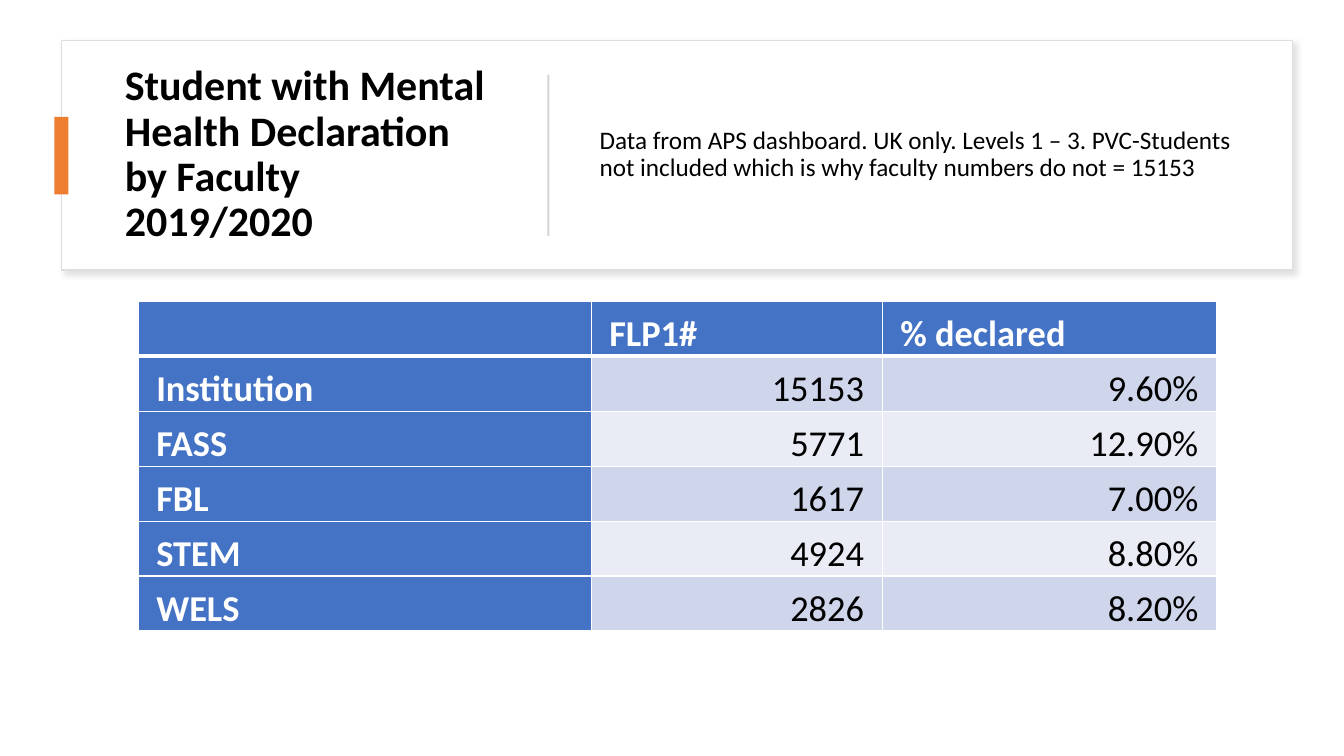
from dataclasses import dataclass

from lxml import etree
from pptx import Presentation
from pptx.dml.color import RGBColor
from pptx.enum.shapes import MSO_SHAPE
from pptx.enum.text import MSO_ANCHOR, PP_ALIGN
from pptx.oxml.ns import qn
from pptx.util import Inches, Pt

RECT = MSO_SHAPE.RECTANGLE
MIDDLE, BOTTOM = MSO_ANCHOR.MIDDLE, MSO_ANCHOR.BOTTOM
LEFT, RIGHT = PP_ALIGN.LEFT, PP_ALIGN.RIGHT

WHITE = RGBColor(0xFF, 0xFF, 0xFF)
BLACK = RGBColor(0x00, 0x00, 0x00)
BLUE = RGBColor(0x44, 0x72, 0xC4)
ORANGE = RGBColor(0xED, 0x7D, 0x31)
CARD_LINE = RGBColor(0xDE, 0xDE, 0xDE)
RULE_GRAY = RGBColor(0xD5, 0xD5, 0xD5)
SHADOW_GRAY = RGBColor(0xC5, 0xC3, 0xC3)
BANDS = (RGBColor(0xCF, 0xD5, 0xEA), RGBColor(0xE9, 0xEB, 0xF5))

FONT = "Calibri"
SLIDE_W, SLIDE_H = Inches(13.333), Inches(7.5)


@dataclass(frozen=True)
class Box:
    """A frame in percent of the slide's width and height."""
    x: float
    y: float
    w: float
    h: float

    def emu(self) -> tuple[int, int, int, int]:
        return (across(self.x), down(self.y), across(self.w), down(self.h))


@dataclass(frozen=True)
class Panel:
    box: Box
    fill: RGBColor
    line: RGBColor | None = None
    shadow: bool = False


@dataclass(frozen=True)
class Label:
    box: Box
    text: str
    size: int
    bold: bool = False
    space_after: int = 0


PANELS = (
    Panel(Box(4.58, 5.33, 91.58, 30.4), WHITE, CARD_LINE, True),
    Panel(Box(4.05, 15.47, 1.05, 10.27), ORANGE),
    Panel(Box(40.73, 9.87, 0.15, 21.33), RULE_GRAY),
)
LABELS = (
    Label(Box(8.55, 8.53, 29.18, 24),
          "Student with Mental Health Declaration\vby Faculty 2019/2020", 30, True),
    Label(Box(43.88, 8.53, 49.2, 24),
          "Data from APS dashboard. UK only. Levels 1 – 3. PVC-Students "
          "not included which is why faculty numbers do not = 15153", 18, space_after=6),
)
TABLE_BOX = Box(10.28, 39.87, 80.25, 43.6)
COLUMN_SHARES = (0.42, 0.27, 0.31)
ROWS = (
    ("", "FLP1#", "% declared"),
    ("Institution", "15153", "9.60%"),
    ("FASS", "5771", "12.90%"),
    ("FBL", "1617", "7.00%"),
    ("STEM", "4924", "8.80%"),
    ("WELS", "2826", "8.20%"),
)


def across(percent: float) -> int:
    return round(SLIDE_W * percent / 100)


def down(percent: float) -> int:
    return round(SLIDE_H * percent / 100)


def style_font(p, size: int, color: RGBColor, bold: bool) -> None:
    p.font.name, p.font.size, p.font.bold = FONT, Pt(size), bold
    p.font.color.rgb = color


def add_shadow(sp) -> None:
    effects = sp._element.spPr.find(qn("a:effectLst"))
    shadow = etree.SubElement(effects, qn("a:outerShdw"), blurRad=str(Pt(4)),
                              dist=str(Pt(3)), dir="2700000", algn="tl", rotWithShape="0")
    color = etree.SubElement(shadow, qn("a:srgbClr"), val=str(SHADOW_GRAY))
    etree.SubElement(color, qn("a:alpha"), val="50000")


def add_panel(s, panel: Panel) -> None:
    sp = s.shapes.add_shape(RECT, *panel.box.emu())
    sp.shadow.inherit = False
    sp.fill.solid()
    sp.fill.fore_color.rgb = panel.fill
    if panel.line is None:
        sp.line.fill.background()
    else:
        sp.line.color.rgb = panel.line
        sp.line.width = Pt(1)
    if panel.shadow:
        add_shadow(sp)


def add_label(s, label: Label) -> None:
    tf = s.shapes.add_textbox(*label.box.emu()).text_frame
    tf.word_wrap = True
    tf.vertical_anchor = MIDDLE
    p = tf.paragraphs[0]
    p.text = label.text
    p.line_spacing = 0.9
    p.space_after = Pt(label.space_after)
    style_font(p, label.size, BLACK, label.bold)


def add_borders(cell, row: int) -> None:
    widths = {"L": 1, "R": 1, "T": 3 if row == 1 else 1, "B": 3 if row == 0 else 1}
    tc_pr = cell._tc.get_or_add_tcPr()
    for side, width in widths.items():
        ln = etree.SubElement(tc_pr, qn(f"a:ln{side}"), w=str(Pt(width)))
        fill = etree.SubElement(ln, qn("a:solidFill"))
        etree.SubElement(fill, qn("a:srgbClr"), val=str(WHITE))


def fill_cell(cell, row: int, col: int, text: str) -> None:
    heading = row == 0 or col == 0
    add_borders(cell, row)
    cell.fill.solid()
    cell.fill.fore_color.rgb = BLUE if heading else BANDS[(row - 1) % 2]
    cell.margin_left = cell.margin_right = Inches(0.18)
    cell.margin_top = cell.margin_bottom = 0
    cell.vertical_anchor = BOTTOM
    p = cell.text_frame.paragraphs[0]
    p.text = text
    p.alignment = LEFT if heading else RIGHT
    p.line_spacing = 1.07
    style_font(p, 26, WHITE if heading else BLACK, heading)


def add_faculty_table(s) -> None:
    frame = s.shapes.add_table(len(ROWS), len(COLUMN_SHARES), *TABLE_BOX.emu())
    table = frame.table
    table.first_col = True
    for column, share in zip(table.columns, COLUMN_SHARES):
        column.width = across(TABLE_BOX.w * share)
    for row, values in enumerate(ROWS):
        table.rows[row].height = down(TABLE_BOX.h / len(ROWS))
        for col, text in enumerate(values):
            fill_cell(table.cell(row, col), row, col, text)


def main() -> None:
    prs = Presentation()
    prs.slide_width, prs.slide_height = SLIDE_W, SLIDE_H
    s = prs.slides.add_slide(prs.slide_layouts[6])

    # Header card with accent and divider
    for panel in PANELS:
        add_panel(s, panel)
    for label in LABELS:
        add_label(s, label)

    # Declarations by faculty
    add_faculty_table(s)
    prs.save("out.pptx")


if __name__ == "__main__":
    main()
